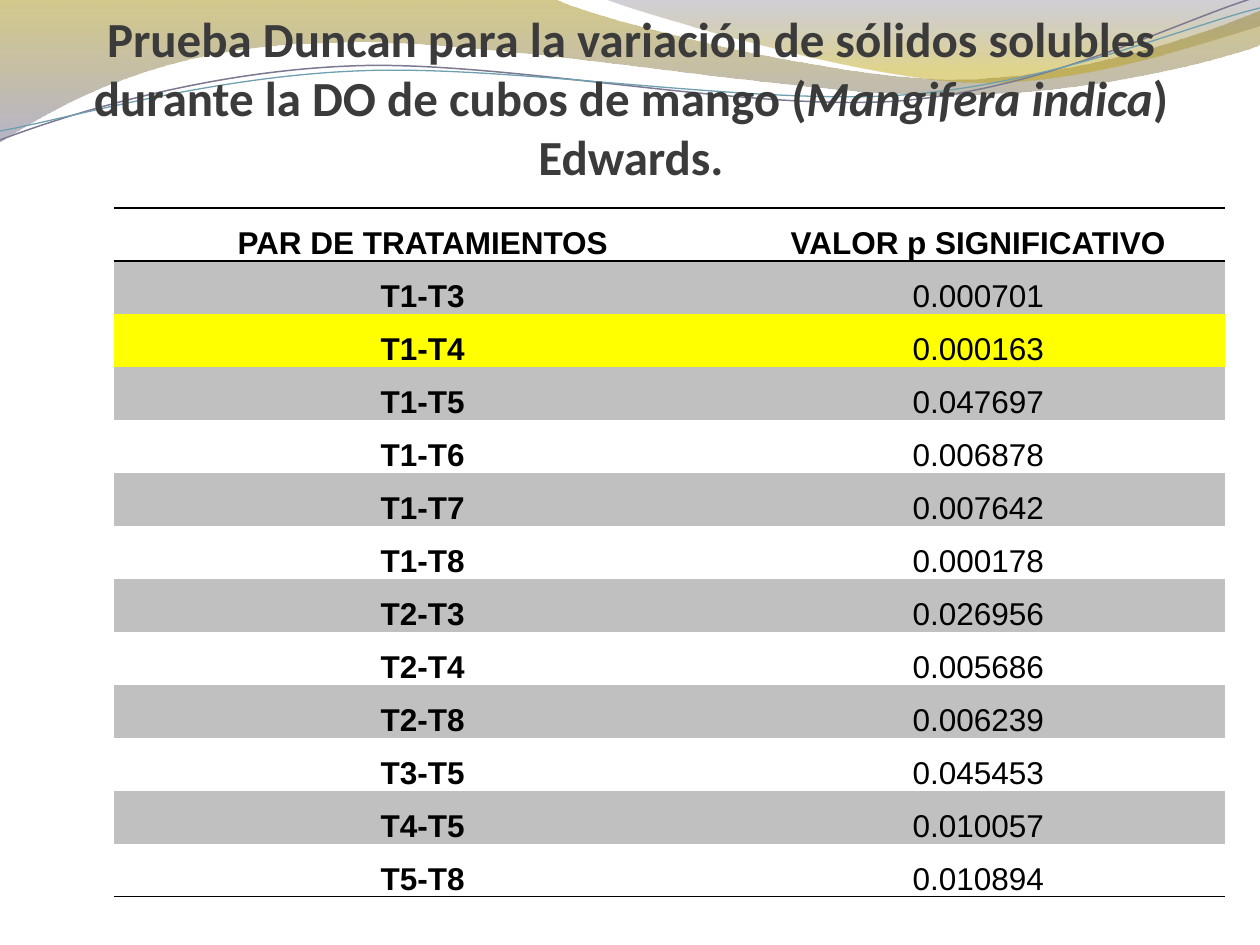
"""Build the slide with the Duncan test results for soluble solids in mango cubes."""
from dataclasses import dataclass

from lxml import etree
from pptx import Presentation
from pptx.dml.color import RGBColor
from pptx.enum.text import MSO_ANCHOR, PP_ALIGN
from pptx.oxml.ns import qn
from pptx.util import Pt

CENTER = PP_ALIGN.CENTER
BOTTOM = MSO_ANCHOR.BOTTOM

EMU_PER_PX = 914400 / 126
NO_GRID_STYLE = "{2D5ABB26-0587-4C30-8999-92F81FD0307C}"

BLACK = RGBColor(0x00, 0x00, 0x00)
CHARCOAL = RGBColor(0x3B, 0x3B, 0x3B)
SILVER = RGBColor(0xC0, 0xC0, 0xC0)
YELLOW = RGBColor(0xFF, 0xFF, 0x00)
OLIVE = RGBColor(0x9E, 0x87, 0x00)
LILAC = RGBColor(0x7B, 0x76, 0x9C)
SLATE = RGBColor(0x66, 0x62, 0x7C)
GOLD = RGBColor(0xBD, 0xA1, 0x00)
MAUVE = RGBColor(0x7C, 0x79, 0x91)
TEAL = RGBColor(0x6E, 0xA0, 0xB0)

Point = tuple[int, int]
Segments = tuple[tuple[Point, ...], ...]


@dataclass(frozen=True)
class Stop:
    position: float
    color: RGBColor
    opacity: int


@dataclass(frozen=True)
class Band:
    start: Point
    segments: Segments
    stops: tuple[Stop, Stop]


@dataclass(frozen=True)
class Wave:
    start: Point
    segments: Segments
    color: RGBColor
    width: float


@dataclass(frozen=True)
class Comparison:
    pair: str
    p_value: str


BANDS = (
    Band((0, 0), (
        ((554, -1),),
        ((600, 21), (837, 79), (955, 79)),
        ((1075, 79), (1207, 33), (1260, 11)),
        ((1261, 45),),
        ((1235, 55), (1096, 96), (940, 95)),
        ((784, 95), (481, 35), (324, 43)),
        ((163, 45), (58, 105), (-1, 142)),
        ((0, 0),),
    ), (Stop(0, OLIVE, 45), Stop(1, LILAC, 55))),
    Band((604, -1), (
        ((641, 14), (859, 78), (969, 82)),
        ((1079, 87), (1211, 40), (1260, 26)),
        ((1260, 0),),
        ((604, -1),),
    ), (Stop(0, SLATE, 30), Stop(0.8, GOLD, 45))),
)
WAVES = (
    Wave((0, 140), (
        ((60, 117), (199, 72), (349, 66)),
        ((498, 59), (747, 112), (898, 101)),
        ((1050, 89), (1182, 19), (1257, -3)),
    ), MAUVE, 0.85),
    Wave((0, 131), (
        ((59, 121), (207, 77), (357, 71)),
        ((508, 64), (752, 106), (903, 95)),
        ((1053, 84), (1186, 26), (1260, 8)),
    ), TEAL, 0.75),
)
TITLE = (
    ("Prueba Duncan para la variación de sólidos solubles durante la DO de cubos de mango (", False),
    ("Mangifera indica", True),
    (") Edwards.", False),
)
HEADER = Comparison("PAR DE TRATAMIENTOS", "VALOR p SIGNIFICATIVO")
COMPARISONS = (
    Comparison("T1-T3", "0.000701"),
    Comparison("T1-T4", "0.000163"),
    Comparison("T1-T5", "0.047697"),
    Comparison("T1-T6", "0.006878"),
    Comparison("T1-T7", "0.007642"),
    Comparison("T1-T8", "0.000178"),
    Comparison("T2-T3", "0.026956"),
    Comparison("T2-T4", "0.005686"),
    Comparison("T2-T8", "0.006239"),
    Comparison("T3-T5", "0.045453"),
    Comparison("T4-T5", "0.010057"),
    Comparison("T5-T8", "0.010894"),
)
HIGHLIGHTED_PAIR = "T1-T4"


def px(length: int) -> int:
    return round(length * EMU_PER_PX)


def apply_format(target, values: dict) -> None:
    for name, value in values.items():
        setattr(target, name, value)


def add_outline(slide, start: Point, segments: Segments, close: bool):
    builder = slide.shapes.build_freeform(px(start[0]), px(start[1]))
    builder.add_line_segments([(px(x), px(y)) for segment in segments for x, y in segment], close=close)
    outline = builder.convert_to_shape()
    outline.shadow.inherit = False
    steps = iter(list(outline.element.iter(qn("a:lnTo"))))
    for segment in segments:
        first, *others = [next(steps) for _ in segment]
        if others:
            first.tag = qn("a:cubicBezTo")
            for step in others:
                first.append(step[0])
                step.getparent().remove(step)
    return outline


def add_band(slide, band: Band) -> None:
    outline = add_outline(slide, band.start, band.segments, True)
    outline.line.fill.background()
    outline.fill.gradient()
    outline.fill.gradient_angle = 270
    stop_nodes = outline.element.iter(qn("a:gs"))
    for stop, gradient_stop, node in zip(band.stops, outline.fill.gradient_stops, stop_nodes):
        gradient_stop.position = stop.position
        gradient_stop.color.rgb = stop.color
        etree.SubElement(node[0], qn("a:alpha"), val=str(stop.opacity * 1000))


def add_wave(slide, wave: Wave) -> None:
    outline = add_outline(slide, wave.start, wave.segments, False)
    outline.fill.background()
    outline.line.color.rgb = wave.color
    outline.line.width = Pt(wave.width)


def add_run(paragraph, text: str, color: RGBColor, font_format: dict) -> None:
    run = paragraph.add_run()
    run.text = text
    apply_format(run.font, font_format)
    run.font.color.rgb = color


def add_title(slide) -> None:
    frame = slide.shapes.add_textbox(px(64), px(87), px(1134), px(157)).text_frame
    apply_format(frame, {"word_wrap": True, "vertical_anchor": BOTTOM, "margin_left": 0,
                         "margin_right": 0, "margin_top": px(6), "margin_bottom": px(59)})
    paragraph = frame.paragraphs[0]
    paragraph.alignment = CENTER
    for text, italic in TITLE:
        add_run(paragraph, text, CHARCOAL,
                {"name": "Calibri", "size": Pt(28), "bold": True, "italic": italic})


def add_borders(cell, ruled_sides: str) -> None:
    for side in "LRTB":
        border = etree.SubElement(cell._tc.get_or_add_tcPr(), qn(f"a:ln{side}"), w=str(Pt(1)))
        if side in ruled_sides:
            fill = etree.SubElement(border, qn("a:solidFill"))
            etree.SubElement(fill, qn("a:srgbClr"), val=str(BLACK))
        else:
            etree.SubElement(border, qn("a:noFill"))


def fill_cell(cell, text: str, bold: bool, background: RGBColor | None, ruled_sides: str) -> None:
    apply_format(cell, {"vertical_anchor": BOTTOM, "margin_left": px(9), "margin_right": px(9),
                        "margin_top": 0, "margin_bottom": 0})
    add_borders(cell, ruled_sides)
    if background is None:
        cell.fill.background()
    else:
        cell.fill.solid()
        cell.fill.fore_color.rgb = background
    paragraph = cell.text_frame.paragraphs[0]
    apply_format(paragraph, {"alignment": CENTER, "line_spacing": 1.4})
    paragraph._p.get_or_add_pPr().set("marL", str(px(62)))
    add_run(paragraph, text, BLACK, {"name": "Arial", "size": Pt(18), "bold": bold})
    paragraph_end = etree.SubElement(paragraph._p, qn("a:endParaRPr"), sz="1800")
    etree.SubElement(paragraph_end, qn("a:latin"), typeface="Arial")


def add_results(slide) -> None:
    rows = (HEADER, *COMPARISONS)
    table = slide.shapes.add_table(len(rows), 2, px(114), px(208), px(1111), px(53 * len(rows))).table
    apply_format(table, {"first_row": False, "horz_banding": False})
    table._tbl.tblPr.find(qn("a:tableStyleId")).text = NO_GRID_STYLE
    edge_rules = {0: "TB", 1: "T", len(rows) - 1: "B"}
    for index, row in enumerate(rows):
        striped = SILVER if index % 2 else None
        background = YELLOW if row.pair == HIGHLIGHTED_PAIR else striped
        ruled_sides = edge_rules.get(index, "")
        fill_cell(table.cell(index, 0), row.pair, True, background, ruled_sides)
        fill_cell(table.cell(index, 1), row.p_value, row is HEADER, background, ruled_sides)


def main() -> None:
    deck = Presentation()
    apply_format(deck, {"slide_width": px(1260), "slide_height": px(945)})
    slide = deck.slides.add_slide(deck.slide_layouts[6])
    for band in BANDS:
        add_band(slide, band)
    for wave in WAVES:
        add_wave(slide, wave)
    add_title(slide)
    add_results(slide)
    deck.save("out.pptx")


if __name__ == "__main__":
    main()
